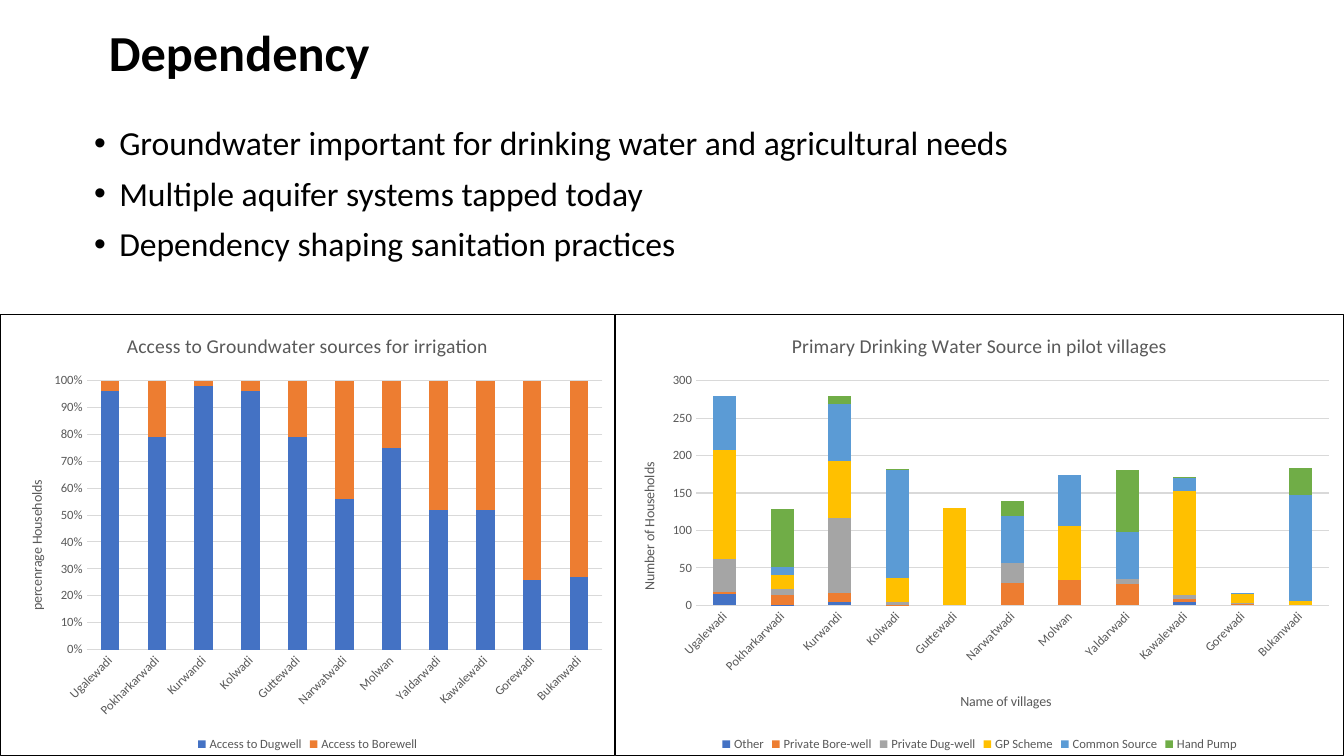
from dataclasses import dataclass
from typing import Optional

from lxml.etree import SubElement
from pptx import Presentation
from pptx.chart.data import CategoryChartData
from pptx.dml.color import RGBColor
from pptx.enum.chart import XL_CHART_TYPE, XL_LEGEND_POSITION, XL_TICK_MARK
from pptx.enum.text import MSO_ANCHOR, MSO_AUTO_SIZE, PP_ALIGN
from pptx.oxml import parse_xml
from pptx.oxml.ns import nsdecls, qn
from pptx.util import Pt

PX = 9525
INK = {
    "black": "000000", "text": "595959", "grid": "D9D9D9", "blue": "4472C4",
    "orange": "ED7D31", "gray": "A5A5A5", "gold": "FFC000", "sky": "5B9BD5",
    "green": "70AD47",
}
TOWNS = ["Ugalewadi", "Pokharkarwadi", "Kurwandi", "Kolwadi", "Guttewadi", "Narwatwadi",
         "Molwan", "Yaldarwadi", "Kawalewadi", "Gorewadi", "Bukanwadi"]
POINTS = ["Groundwater important for drinking water and agricultural needs",
          "Multiple aquifer systems tapped today",
          "Dependency shaping sanitation practices"]


@dataclass
class Group:
    name: str
    ink: str
    vals: list[Optional[int]]


@dataclass
class Graph:
    title: str
    kind: XL_CHART_TYPE
    box: tuple[int, int, int, int]
    plot: tuple[float, ...]
    up: str
    up_at: tuple[float, ...]
    step: float
    top: float
    form: str
    groups: list[Group]
    base: str = ""
    base_at: tuple[float, ...] = ()
    rule: bool = False


GRAPHS = [
    Graph("Primary Drinking Water Source in pilot villages", XL_CHART_TYPE.COLUMN_STACKED,
          (586, 299, 694, 421), (0.11, 0.15, 0.87, 0.51),
          "Number of Households", (0.03, 0.33), 50, 300, "General",
          [Group("Other", "blue", [15, 1, 4, None, None, None, None, None, 4, None, None]),
           Group("Private Bore-well", "orange", [3, 13, 12, 1, None, 30, 34, 28, 4, 2, None]),
           Group("Private Dug-well", "gray", [44, 8, 101, 4, None, 26, None, 7, 6, 1, None]),
           Group("GP Scheme", "gold", [146, 18, 76, 31, 130, None, 72, None, 139, 12, 6]),
           Group("Common Source", "sky", [71, 11, 76, 145, None, 63, 68, 63, 17, 1, 141]),
           Group("Hand Pump", "green", [None, 77, 10, 1, None, 20, None, 83, 1, None, 37])],
          "Name of villages", (0.47, 0.85)),
    Graph("Access to Groundwater sources for irrigation", XL_CHART_TYPE.COLUMN_STACKED_100,
          (0, 299, 586, 421), (0.14, 0.15, 0.84, 0.61),
          "percenrage Households", (0.04, 0.37), 0.1, 1, "0%",
          [Group("Access to Dugwell", "blue", [96, 79, 98, 96, 79, 56, 75, 52, 52, 26, 27]),
           Group("Access to Borewell", "orange", [4, 21, 2, 4, 21, 44, 25, 48, 48, 74, 73])],
          rule=True),
]


def tint(name: str) -> RGBColor:
    return RGBColor.from_string(INK[name])


def style(font, size: int, ink: str = "text", bold: bool = False) -> None:
    font.name = "Calibri"
    font.size = Pt(size)
    font.bold = bold
    font.color.rgb = tint(ink)


def write(frame, text: str, *, size: int, ink: str = "text", bold: bool = False,
          gap: Optional[int] = None, dot: bool = False, fresh: bool = True) -> None:
    para = frame.paragraphs[0] if fresh else frame.add_paragraph()
    run = para.add_run()
    run.text = text
    style(run.font, size, ink, bold)
    if gap is not None:
        para.alignment = PP_ALIGN.LEFT
        para.line_spacing = 0.9
        para.space_before = Pt(gap)
    if dot:
        props = para._p.get_or_add_pPr()
        props.set("marL", str(24 * PX))
        props.set("indent", str(-24 * PX))
        SubElement(props, qn("a:buFont")).set("typeface", "Arial")
        SubElement(props, qn("a:buChar")).set("char", "•")


def move(shape, box: tuple[int, int, int, int]) -> None:
    shape.left, shape.top, shape.width, shape.height = (n * PX for n in box)


def place(node, spot: int, at: tuple[float, ...]) -> None:
    for old in node.findall(qn("c:layout")):
        node.remove(old)
    lay = parse_xml(f"<c:layout {nsdecls('c')}/>")
    form = SubElement(lay, qn("c:manualLayout"))
    if len(at) == 4:
        SubElement(form, qn("c:layoutTarget")).set("val", "inner")
    for key in "xy":
        SubElement(form, qn(f"c:{key}Mode")).set("val", "edge")
    for key, val in zip("xywh", at):
        SubElement(form, qn(f"c:{key}")).set("val", str(val))
    node.insert(spot, lay)


def label(axis, text: str, at: tuple[float, ...], turn: int) -> None:
    title = axis.axis_title
    write(title.text_frame, text, size=10)
    node = title._element
    body = node.find(".//" + qn("a:bodyPr"))
    body.set("rot", str(turn * 60000))
    body.set("vert", "horz")
    place(node, 1, at)


def draw(slide, graph: Graph) -> None:
    data = CategoryChartData()
    data.categories = TOWNS
    for group in graph.groups:
        data.add_series(group.name, group.vals)
    chart = slide.shapes.add_chart(graph.kind, *(n * PX for n in graph.box), data).chart
    style(chart.font, 10, "black")
    chart.has_title = True
    write(chart.chart_title.text_frame, graph.title, size=14)
    chart.chart_title.include_in_layout = False
    chart.has_legend = True
    chart.legend.position = XL_LEGEND_POSITION.BOTTOM
    chart.legend.include_in_layout = False
    style(chart.legend.font, 9)
    bars = chart.plots[0]
    bars.gap_width = 150
    bars.overlap = 100
    bars.vary_by_categories = False
    for part, group in zip(bars.series, graph.groups):
        part.format.fill.solid()
        part.format.fill.fore_color.rgb = tint(group.ink)
    base, side = chart.category_axis, chart.value_axis
    for axis in (base, side):
        axis.major_tick_mark = axis.minor_tick_mark = XL_TICK_MARK.NONE
        style(axis.tick_labels.font, 9)
        axis.format.line.fill.background()
    if graph.rule:
        base.format.line.color.rgb = tint("grid")
        base.format.line.width = Pt(0.75)
    base._element.find(qn("c:txPr")).find(qn("a:bodyPr")).set("rot", str(-45 * 60000))
    side.minimum_scale, side.maximum_scale = 0, graph.top
    side.major_unit = graph.step
    side.tick_labels.number_format = graph.form
    side.tick_labels.number_format_is_linked = False
    side.has_major_gridlines = True
    side.major_gridlines.format.line.color.rgb = tint("grid")
    side.major_gridlines.format.line.width = Pt(0.75)
    label(side, graph.up, graph.up_at, -90)
    if graph.base:
        label(base, graph.base, graph.base_at, 0)
    root = chart.element
    place(root.find(".//" + qn("c:plotArea")), 0, graph.plot)
    root.find(qn("c:chart")).addnext(parse_xml(
        f'<c:spPr {nsdecls("c", "a")}><a:noFill/><a:ln w="{PX}"><a:solidFill>'
        f'<a:srgbClr val="{INK["black"]}"/></a:solidFill></a:ln></c:spPr>'))


def main() -> None:
    deck = Presentation()
    deck.slide_width, deck.slide_height = 1280 * PX, 720 * PX
    slide = deck.slides.add_slide(deck.slide_layouts[1])
    title, body = slide.shapes.title, slide.placeholders[1]
    move(title, (94, 1, 373, 103))
    move(body, (80, 116, 1084, 161))
    for shape, side in ((title, MSO_ANCHOR.MIDDLE), (body, MSO_ANCHOR.TOP)):
        shape.text_frame.auto_size = MSO_AUTO_SIZE.NONE
        shape.text_frame.word_wrap = True
        shape.text_frame.vertical_anchor = side
    write(title.text_frame, "Dependency", size=36, ink="black", bold=True, gap=0)
    for n, point in enumerate(POINTS):
        write(body.text_frame, point, size=24, ink="black", gap=10, dot=True, fresh=n == 0)
    for graph in GRAPHS:
        draw(slide, graph)
    deck.save("out.pptx")


if __name__ == "__main__":
    main()
